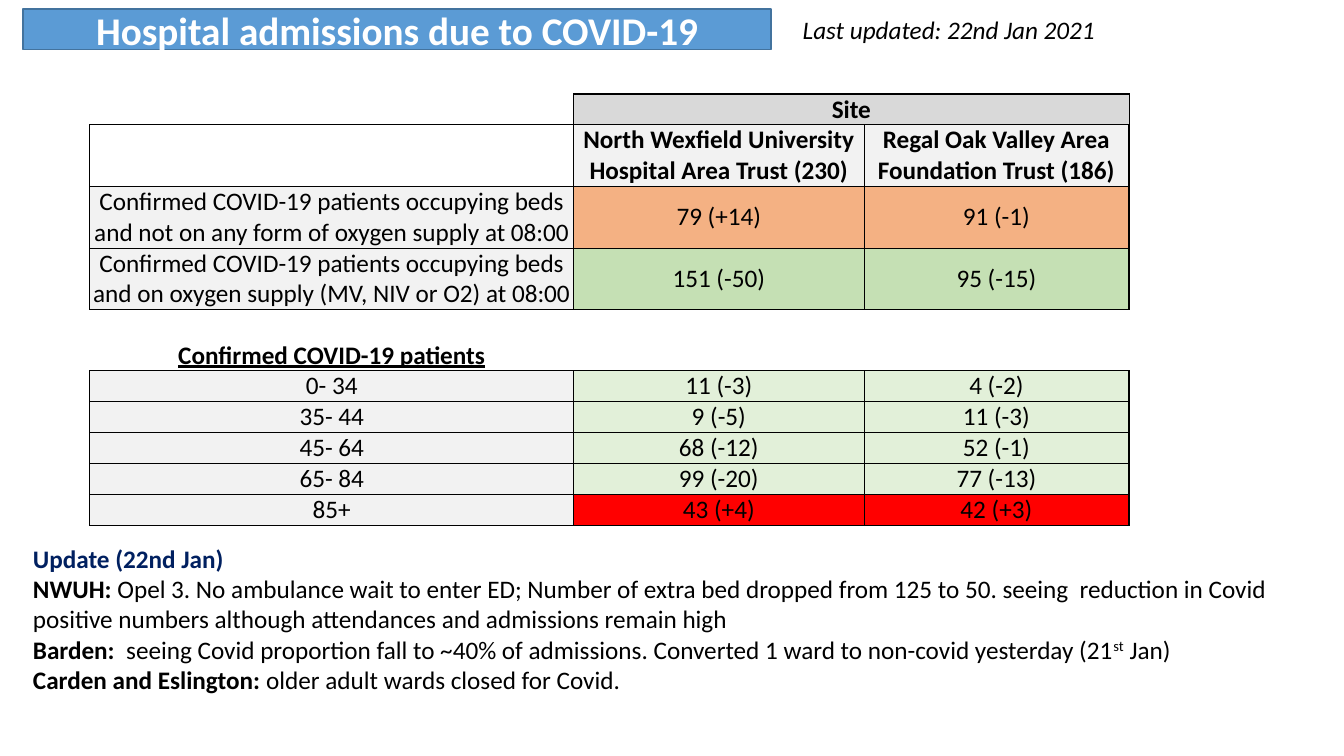
from lxml.etree import SubElement
from pptx import Presentation
from pptx.dml.color import RGBColor
from pptx.enum.text import MSO_ANCHOR, MSO_AUTO_SIZE, PP_ALIGN
from pptx.oxml.ns import qn
from pptx.util import Cm, Pt

BLACK = "000000"
GREY = "F2F2F2"
PALE = "E2F0D9"
PLAIN = "{2D5ABB26-0587-4C30-8999-92F81FD0307C}"
HEADS = ["", "North Wexfield University Hospital Area Trust (230)",
         "Regal Oak Valley Area Foundation Trust (186)"]
BEDS = [
    ("Confirmed COVID-19 patients occupying beds and not on any form of oxygen supply at 08:00",
     "79 (+14)", "91 (-1)", "F4B183"),
    ("Confirmed COVID-19 patients occupying beds and on oxygen supply (MV, NIV or O2) at 08:00",
     "151 (-50)", "95 (-15)", "C5E0B4"),
]
AGES = [
    ("0- 34", "11 (-3)", "4 (-2)", PALE),
    ("35- 44", "9 (-5)", "11 (-3)", PALE),
    ("45- 64", "68 (-12)", "52 (-1)", PALE),
    ("65- 84", "99 (-20)", "77 (-13)", PALE),
    ("85+", "43 (+4)", "42 (+3)", "FF0000"),
]
NEWS = [
    [("Update (22nd Jan)", "head")],
    [("NWUH: ", "bold"),
     ("Opel 3. No ambulance wait to enter ED; Number of extra bed dropped from 125 to 50. "
      "seeing  reduction in Covid positive numbers although attendances and admissions remain high", "")],
    [("Barden:  ", "bold"),
     ("seeing Covid proportion fall to ~40% of admissions. Converted 1 ward to non-covid yesterday (21", ""),
     ("st", "super"), (" Jan)", "")],
    [("Carden and Eslington: ", "bold"), ("older adult wards closed for Covid.", "")],
]


def paint(code):
    return RGBColor.from_string(code)


def write(para, text, size=18, color=BLACK, bold=False, italic=False, under=False):
    run = para.add_run()
    run.text = text
    font = run.font
    font.name, font.size = "Calibri", Pt(size)
    font.bold, font.italic, font.underline = bold, italic, under
    font.color.rgb = paint(color)
    return run


def place(shape, box):
    shape.left, shape.top, shape.width, shape.height = [Cm(v) for v in box]
    frame = shape.text_frame
    frame.word_wrap = True
    frame.auto_size = MSO_AUTO_SIZE.NONE
    frame.margin_left = frame.margin_right = Cm(0.25)
    frame.margin_top = frame.margin_bottom = Cm(0.13)
    return frame


def banner(slide, box):
    left, top, width, height = box
    title = slide.shapes.title
    frame = place(title, (left, top, 18.85, height))
    frame.vertical_anchor = MSO_ANCHOR.MIDDLE
    title.fill.solid()
    title.fill.fore_color.rgb = paint("5B9BD5")
    title.line.color.rgb = paint("43739E")
    title.line.width = Pt(1)
    para = frame.paragraphs[0]
    para.alignment = PP_ALIGN.CENTER
    write(para, "Hospital admissions due to COVID-19", 28, "FFFFFF", True)
    date = slide.shapes.add_textbox(0, 0, 0, 0)
    frame = place(date, (left + 19.4, top, width - 19.4, height))
    write(frame.paragraphs[0], "Last updated: 22nd Jan 2021", italic=True)


def border(cell, row, col):
    props = cell._tc.get_or_add_tcPr()
    heavy = {"L": col == 0 or row == 1, "R": col == 2,
             "T": row in (1, 2, 7), "B": row == 1}
    for side, thick in heavy.items():
        line = SubElement(props, qn("a:ln" + side), w=str(Pt(1 if thick else 0.5)))
        solid = SubElement(line, qn("a:solidFill"))
        SubElement(solid, qn("a:srgbClr"), val=BLACK)


def label(cell, text, anchor, bold=False, under=False):
    cell.vertical_anchor = anchor
    para = cell.text_frame.paragraphs[0]
    para.alignment = PP_ALIGN.CENTER
    write(para, text, bold=bold, under=under)


def shade(cell, code):
    cell.fill.solid()
    cell.fill.fore_color.rgb = paint(code)


def grid(slide, box):
    table = slide.shapes.add_table(12, 4, *[Cm(v) for v in box]).table
    table.first_row = table.horz_banding = False
    table._tbl.tblPr.find(qn("a:tableStyleId")).text = PLAIN
    for col, width in zip(table.columns, (12.2, 7.31, 6.68, 1.4)):
        col.width = Cm(width)
    for index, row in enumerate(table.rows):
        row.height = Cm(1.54 if index in (2, 3, 4) else 0.77)
        for cell in row.cells:
            cell.margin_left = cell.margin_right = Cm(0.02)
            cell.margin_top = cell.margin_bottom = 0
            SubElement(cell.text_frame.paragraphs[0]._p, qn("a:endParaRPr"), sz="1200")
    site = table.cell(1, 1)
    site.merge(table.cell(1, 2))
    for col in (1, 2):
        border(table.cell(1, col), 1, col)
    label(site, "Site", MSO_ANCHOR.BOTTOM, True)
    shade(site, "D9D9D9")
    for col, text in enumerate(HEADS):
        cell = table.cell(2, col)
        border(cell, 2, col)
        if text:
            label(cell, text, MSO_ANCHOR.MIDDLE, True)
            shade(cell, GREY)
    label(table.cell(6, 0), "Confirmed COVID-19 patients", MSO_ANCHOR.BOTTOM, True, True)
    for first, block, anchor in ((3, BEDS, MSO_ANCHOR.MIDDLE), (7, AGES, MSO_ANCHOR.BOTTOM)):
        for row, (*texts, code) in enumerate(block, first):
            for col, text in enumerate(texts):
                cell = table.cell(row, col)
                border(cell, row, col)
                label(cell, text, anchor)
                shade(cell, code if col else GREY)


def update(slide, box):
    frame = place(slide.placeholders[1], box)
    frame.vertical_anchor = MSO_ANCHOR.TOP
    for index, parts in enumerate(NEWS):
        para = frame.add_paragraph() if index else frame.paragraphs[0]
        para.space_before = Pt(0)
        props = para._p.get_or_add_pPr()
        props.set("marL", "0")
        props.set("indent", "0")
        SubElement(props, qn("a:buNone"))
        for text, style in parts:
            color = "002060" if style == "head" else BLACK
            run = write(para, text, color=color, bold=style in ("head", "bold"))
            if style == "super":
                run._r.get_or_add_rPr().set("baseline", "30000")


def main():
    deck = Presentation()
    deck.slide_width, deck.slide_height = Cm(33.87), Cm(19.05)
    slide = deck.slides.add_slide(deck.slide_layouts[1])
    banner(slide, (0.58, 0.23, 32.4, 1.02))
    grid(slide, (2.26, 1.6, 27.59, 11.58))
    update(slide, (0.58, 13.56, 32.72, 5.4))
    deck.save("out.pptx")


if __name__ == "__main__":
    main()
